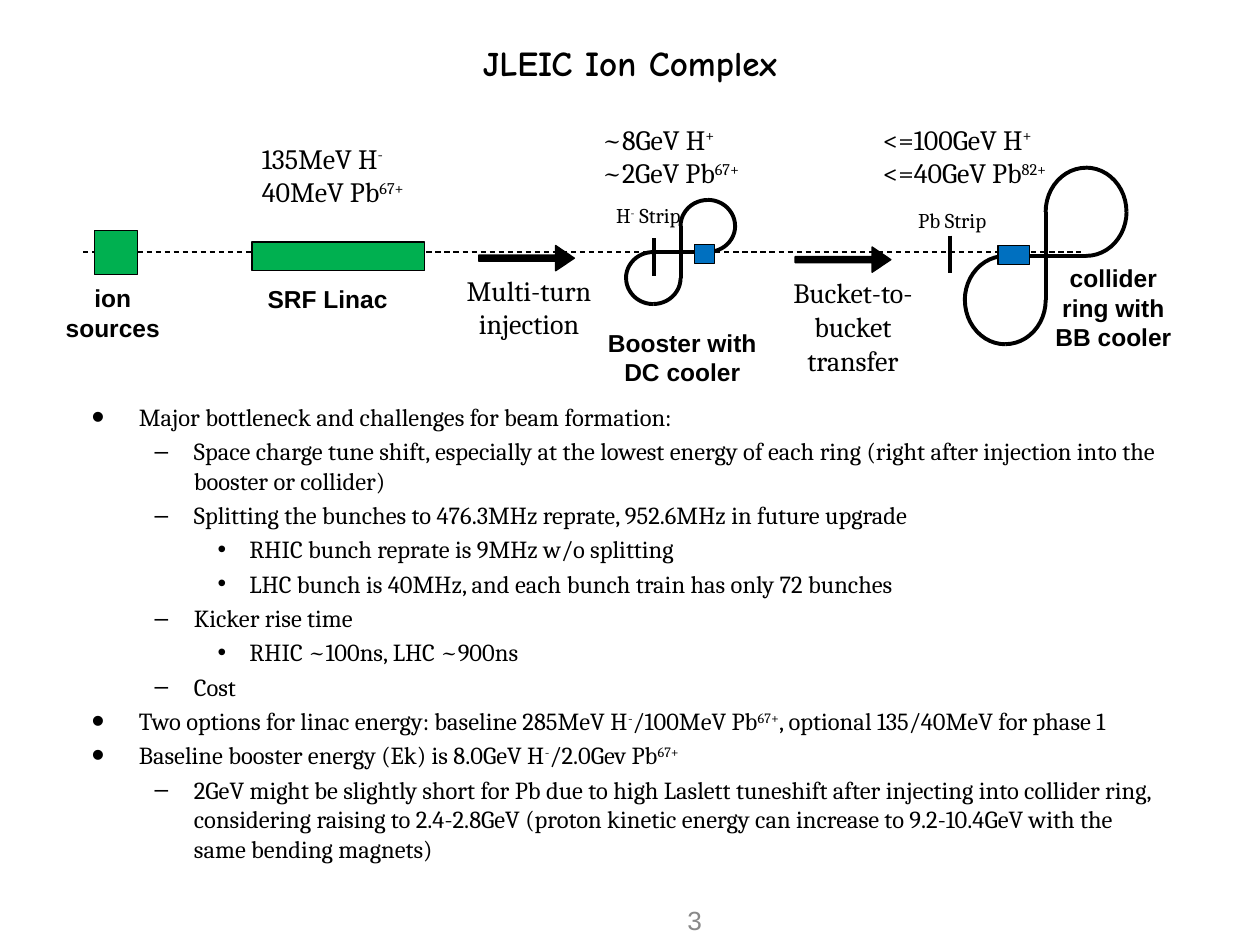
from lxml import etree
from pptx import Presentation
from pptx.dml.color import RGBColor
from pptx.enum.dml import MSO_LINE
from pptx.enum.shapes import MSO_CONNECTOR, MSO_SHAPE
from pptx.enum.text import MSO_ANCHOR, MSO_AUTO_SIZE, PP_ALIGN
from pptx.oxml.ns import qn
from pptx.util import Cm, Pt

RECT, ARC, ARROW = MSO_SHAPE.RECTANGLE, MSO_SHAPE.ARC, MSO_SHAPE.RIGHT_ARROW
STRAIGHT, DASH = MSO_CONNECTOR.STRAIGHT, MSO_LINE.DASH
LEFT, CENTER, RIGHT = PP_ALIGN.LEFT, PP_ALIGN.CENTER, PP_ALIGN.RIGHT
TOP, MIDDLE = MSO_ANCHOR.TOP, MSO_ANCHOR.MIDDLE
GROW = MSO_AUTO_SIZE.SHAPE_TO_FIT_TEXT

COLORS = {"black": "000000", "green": "00B050", "blue": "0070C0", "gray": "898989"}
THIN, THICK = 0.75, 2.25

STYLES = {
    "title": {"name": "Comic Neue", "size": Pt(20), "bold": True},
    "number": {"name": "Arial", "size": Pt(15)},
    "station": {"name": "Arial", "size": Pt(14), "bold": True},
    "beam": {"name": "Cambria", "size": Pt(16)},
    "strip": {"name": "Cambria", "size": Pt(12)},
    "body": {"name": "Cambria", "size": Pt(14)},
}

BULLETS = [
    {"char": "•", "size": 150, "left": 0.95, "hang": 0.95},
    {"char": "–", "size": 100, "left": 2.06, "hang": 0.79},
    {"char": "•", "size": 100, "left": 3.18, "hang": 0.64},
]

POINTS = [
    (0, "Major bottleneck and challenges for beam formation:"),
    (1, "Space charge tune shift, especially at the lowest energy of each ring "
        "(right after injection into the booster or collider)"),
    (1, "Splitting the bunches to 476.3MHz reprate, 952.6MHz in future upgrade"),
    (2, "RHIC bunch reprate is 9MHz w/o splitting"),
    (2, "LHC bunch is 40MHz, and each bunch train has only 72 bunches"),
    (1, "Kicker rise time"),
    (2, "RHIC ~100ns, LHC ~900ns"),
    (1, "Cost"),
    (0, "Two options for linac energy: baseline 285MeV H^-^/100MeV Pb^67+^, "
        "optional 135/40MeV for phase 1"),
    (0, "Baseline booster energy (Ek) is 8.0GeV H^-^/2.0Gev Pb^67+^"),
    (1, "2GeV might be slightly short for Pb due to high Laslett tuneshift after "
        "injecting into collider ring, considering raising to 2.4-2.8GeV (proton "
        "kinetic energy can increase to 9.2-10.4GeV with the same bending magnets)"),
]

BLOCKS = [
    (1.1, 2.35, 0.87, 0.89, "green"),
    (4.28, 2.58, 3.48, 0.58, "green"),
    (13.2, 2.63, 0.41, 0.38, "blue"),
    (19.32, 2.65, 0.64, 0.38, "blue"),
]
RINGS = [(11.82, 1.73, 2.2, 2.1), (18.65, 1.08, 3.26, 3.56)]
ARROWS = [(8.85, 2.65), (15.23, 2.68)]
STRIPPERS = [(12.38, 2.5), (18.35, 2.45)]
LABELS = [
    (0.04, 3.29, 2.87, 1.45, "station", "ion sources"),
    (3.85, 3.31, 3.91, 0.86, "station", "SRF Linac"),
    (10.86, 4.18, 4.19, 1.45, "station", "Booster with DC cooler"),
    (20.16, 2.88, 2.97, 2.06, "station", "collider ring with BB cooler"),
    (7.91, 3.08, 3.91, 1.63, "beam", "Multi-turn injection"),
    (14.44, 3.14, 3.91, 1.63, "beam", "Bucket-to-bucket transfer"),
]
READINGS = [
    (4.23, 0.42, 3.58, 1.63, "beam", "135MeV H^-^", "40MeV Pb^67+^"),
    (11.09, 0.04, 3.51, 1.63, "beam", "~8GeV H^+^", "~2GeV Pb^67+^"),
    (16.75, 0.04, 4.11, 1.63, "beam", "<=100GeV H^+^", "<=40GeV Pb^82+^"),
    (11.37, 1.66, 1.85, 0.76, "strip", "H^-^ Strip"),
    (17.46, 1.76, 1.9, 0.76, "strip", "Pb Strip"),
]


def rgb(name):
    return RGBColor.from_string(COLORS[name])


def add_spans(para, text, style, color="black"):
    for index, piece in enumerate(text.split("^")):
        if not piece:
            continue
        span = para.add_run()
        span.text = piece
        for key, value in STYLES[style].items():
            setattr(span.font, key, value)
        span.font.color.rgb = rgb(color)
        if index % 2:
            span.font._element.set("baseline", "30000")


def add_text(page, box, lines, style, align=LEFT, wrap=True, anchor=TOP,
             grow=False, color="black"):
    frame = page.shapes.add_textbox(*map(Cm, box)).text_frame
    frame.word_wrap = wrap
    frame.vertical_anchor = anchor
    if grow:
        frame.auto_size = GROW
    for index, line in enumerate(lines):
        para = frame.add_paragraph() if index else frame.paragraphs[0]
        para.alignment = align
        add_spans(para, line, style, color)
    return frame


def add_block(page, kind, box, fill=None, width=THIN):
    shape = page.shapes.add_shape(kind, *map(Cm, box))
    shape.shadow.inherit = False
    if fill:
        shape.fill.solid()
        shape.fill.fore_color.rgb = rgb(fill)
    else:
        shape.fill.background()
    shape.line.color.rgb = rgb("black")
    shape.line.width = Pt(width)
    return shape


def add_line(page, start, end, width=THICK, dash=None):
    line = page.shapes.add_connector(STRAIGHT, *map(Cm, (*start, *end)))
    line.line.color.rgb = rgb("black")
    line.line.width = Pt(width)
    if dash:
        line.line.dash_style = dash
    etree.SubElement(line._element.spPr, qn("a:effectLst"))


def add_ring(page, box):
    left, top, width, height = box
    loop_w, loop_h = width / 2, height / 2
    mid_x, mid_y = left + loop_w, top + loop_h
    add_line(page, (mid_x, mid_y - loop_h / 2), (mid_x, mid_y + loop_h / 2))
    add_line(page, (mid_x - loop_w / 2, mid_y), (mid_x + loop_w / 2, mid_y))
    for loop_x, loop_y, turns in ((mid_x, top, (0, 270, 90)),
                                  (left, mid_y, (180, 90, 270))):
        for turn in turns:
            arc_w, arc_h = (loop_h, loop_w) if turn % 180 else (loop_w, loop_h)
            arc_box = (loop_x + (loop_w - arc_w) / 2,
                       loop_y + (loop_h - arc_h) / 2, arc_w, arc_h)
            add_block(page, ARC, arc_box, width=THICK).rotation = turn


def add_beamline(page, box):
    left, top = box[:2]

    def place(x, y, *size):
        return (left + x, top + y, *size)

    add_line(page, place(0.88, 2.78), place(20.99, 2.78), THIN, DASH)
    for ring in RINGS:
        add_ring(page, place(*ring))
    for *block, fill in BLOCKS:
        add_block(page, RECT, place(*block), fill)
    for x, y in ARROWS:
        arrow = add_block(page, ARROW, place(x, y, 1.93, 0.51), "black")
        arrow.adjustments[0], arrow.adjustments[1] = 0.24, 0.74
    for x, y in STRIPPERS:
        add_line(page, place(x, y), place(x, y + 0.76))
    for x, y, width, height, style, text in LABELS:
        add_text(page, place(x, y, width, height), [text], style, CENTER, grow=True)
    for x, y, width, height, style, *lines in READINGS:
        add_text(page, place(x, y, width, height), lines, style, wrap=False, grow=True)


def add_points(page, box):
    frame = add_text(page, box, [], "body")
    for index, (level, text) in enumerate(POINTS):
        para = frame.add_paragraph() if index else frame.paragraphs[0]
        para.level = level
        if index:
            para.space_before = Pt(2.8)
        bullet = BULLETS[level]
        props = para._p.get_or_add_pPr()
        props.set("marL", str(Cm(bullet["left"])))
        props.set("indent", str(-Cm(bullet["hang"])))
        for tag, key, value in (("a:buSzPct", "val", str(bullet["size"] * 1000)),
                                ("a:buFont", "typeface", "Arial"),
                                ("a:buChar", "char", bullet["char"])):
            etree.SubElement(props, qn(tag)).set(key, value)
        add_spans(para, text, "body")


def main():
    deck = Presentation()
    deck.slide_width, deck.slide_height = Cm(25.4), Cm(19.05)
    page = deck.slides.add_slide(deck.slide_layouts[6])
    add_text(page, (1.9, 0, 21.6, 2.54), ["JLEIC Ion Complex"], "title", CENTER,
             anchor=MIDDLE)
    add_beamline(page, (0.8, 2.3, 23.13, 5.63))
    add_points(page, (1.6, 7.98, 22.05, 7.62))
    add_text(page, (12.5, 18.03, 1.9, 1.02), ["3"], "number", RIGHT,
             anchor=MIDDLE, color="gray")
    deck.save("out.pptx")


if __name__ == "__main__":
    main()
